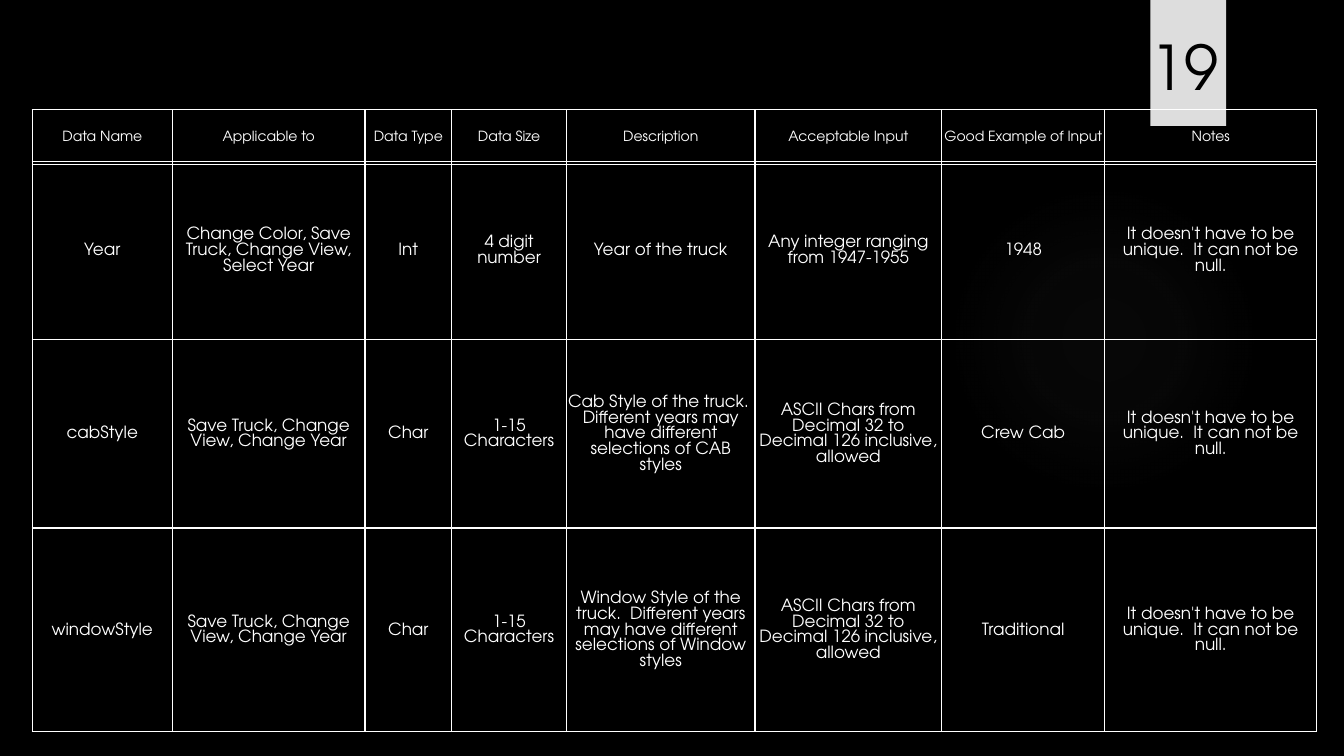
from pptx import Presentation
from pptx.dml.color import RGBColor
from pptx.enum.shapes import MSO_SHAPE
from pptx.enum.text import MSO_ANCHOR, PP_ALIGN
from pptx.oxml import parse_xml
from pptx.oxml.ns import nsdecls
from pptx.util import Inches, Pt

HUES = {"back": "000000", "badge": "DDDDDD", "glow": "666666", "text": "FFFFFF"}
FONT = "TeX Gyre Adventor"

# Table content; column widths and row heights are percent of the slide
LEFT = 2.4
COLS = [10.43, 14.33, 6.45, 8.55, 14.03, 13.88, 12.15, 15.75]
HEADS = ["Data Name", "Applicable to", "Data Type", "Data Size", "Description",
         "Acceptable Input", "Good Example of Input", "Notes"]
NOTE = "It doesn't have to be unique.  It can not be null."
SAVE = "Save Truck, Change View, Change Year"
SIZE = "1-15 Characters"
ASCII = "ASCII Chars from Decimal 32 to Decimal 126 inclusive, allowed"
ROWS = [
    ["Year", "Change Color, Save Truck, Change View, Select Year", "Int",
     "4 digit number", "Year of the truck", "Any integer ranging from 1947-1955",
     "1948", NOTE],
    ["cabStyle", SAVE, "Char", SIZE,
     "Cab Style of the truck.  Different years may have different selections of CAB styles",
     ASCII, "Crew Cab", NOTE],
    ["windowStyle", SAVE, "Char", SIZE,
     "Window Style of the truck.  Different years may have different selections of Window styles",
     ASCII, "Traditional", NOTE],
]


def write(frame, text, size=12, hue="text", pitch=None):
    """Put centred text in a frame; pitch is the line height in points."""
    para = frame.paragraphs[0]
    para.text = text
    para.alignment = PP_ALIGN.CENTER
    if pitch:
        para.line_spacing = Pt(pitch)
    font = para.runs[0].font
    font.name, font.size = FONT, Pt(size)
    font.color.rgb = RGBColor.from_string(HUES[hue])


class Deck:
    """Holds the style and the slide; places are percent of its size."""

    def __init__(self):
        self.file = Presentation()
        self.file.slide_width = Inches(13.33)
        self.file.slide_height = Inches(7.5)
        self.slide = self.file.slides.add_slide(self.file.slide_layouts[6])
        self.paint(self.slide.background.fill, "back")

    def paint(self, fill, hue):
        fill.solid()
        fill.fore_color.rgb = RGBColor.from_string(HUES[hue])

    def wide(self, share):
        return round(self.file.slide_width * share / 100)

    def high(self, share):
        return round(self.file.slide_height * share / 100)

    def place(self, x, y, w, h):
        return self.wide(x), self.high(y), self.wide(w), self.high(h)

    def shape(self, kind, *spot, hue):
        item = self.slide.shapes.add_shape(kind, *self.place(*spot))
        item.shadow.inherit = False
        item.line.fill.background()
        self.paint(item.fill, hue)
        return item

    def glow(self, *spot, stops):
        """Circle that fades out; stops are (position, opacity) in percent."""
        item = self.shape(MSO_SHAPE.OVAL, *spot, hue="glow")
        marks = "".join(
            f'<a:gs pos="{pos * 1000}"><a:srgbClr val="{HUES["glow"]}">'
            f'<a:alpha val="{alpha * 1000}"/></a:srgbClr></a:gs>'
            for pos, alpha in stops)
        fade = parse_xml(
            f'<a:gradFill {nsdecls("a")} rotWithShape="1"><a:gsLst>{marks}</a:gsLst>'
            '<a:path path="circle"><a:fillToRect l="50000" t="50000" r="50000" '
            'b="50000"/></a:path></a:gradFill>')
        props = item.fill._xPr
        props.replace(props.find("{*}solidFill"), fade)

    def label(self, text, *spot, **form):
        frame = self.slide.shapes.add_textbox(*self.place(*spot)).text_frame
        frame.word_wrap = True
        frame.vertical_anchor = MSO_ANCHOR.BOTTOM
        write(frame, text, **form)

    def edge(self, cell):
        props = cell._tc.get_or_add_tcPr()
        for spot, side in enumerate("LRTB"):
            props.insert(spot, parse_xml(
                f'<a:ln{side} {nsdecls("a")} w="12700"><a:solidFill>'
                f'<a:srgbClr val="{HUES["text"]}"/></a:solidFill></a:ln{side}>'))

    def table(self, top, highs, rows, **form):
        spot = self.place(LEFT, top, sum(COLS), sum(highs))
        grid = self.slide.shapes.add_table(len(rows), len(COLS), *spot).table
        grid.first_row = grid.horz_banding = False
        for col, share in zip(grid.columns, COLS):
            col.width = self.wide(share)
        for line, share, texts in zip(grid.rows, highs, rows):
            line.height = self.high(share)
            for cell, text in zip(line.cells, texts):
                cell.fill.background()
                cell.margin_left = cell.margin_right = cell.margin_top = Inches(0.01)
                cell.margin_bottom = 0
                cell.vertical_anchor = MSO_ANCHOR.MIDDLE
                write(cell.text_frame, text, **form)
                self.edge(cell)


def main():
    deck = Deck()
    # Backdrop glow and page badge
    deck.glow(70.59, 24.4, 23.11, 41.07, stops=[(0, 7), (36, 6), (69, 0)])
    deck.shape(MSO_SHAPE.RECTANGLE, 85.6, 0, 5.63, 16.67, hue="badge")
    deck.label("19", 82.82, 2.67, 10.65, 11.6, size=44, hue="back")
    # Data rows, then the heading row above them
    deck.table(21.33, [23.6, 24.93, 26.93], ROWS, size=12, pitch=11.2)
    deck.table(14.53, [7.2], [HEADS], size=10, pitch=9.3)
    deck.file.save("out.pptx")


if __name__ == "__main__":
    main()
